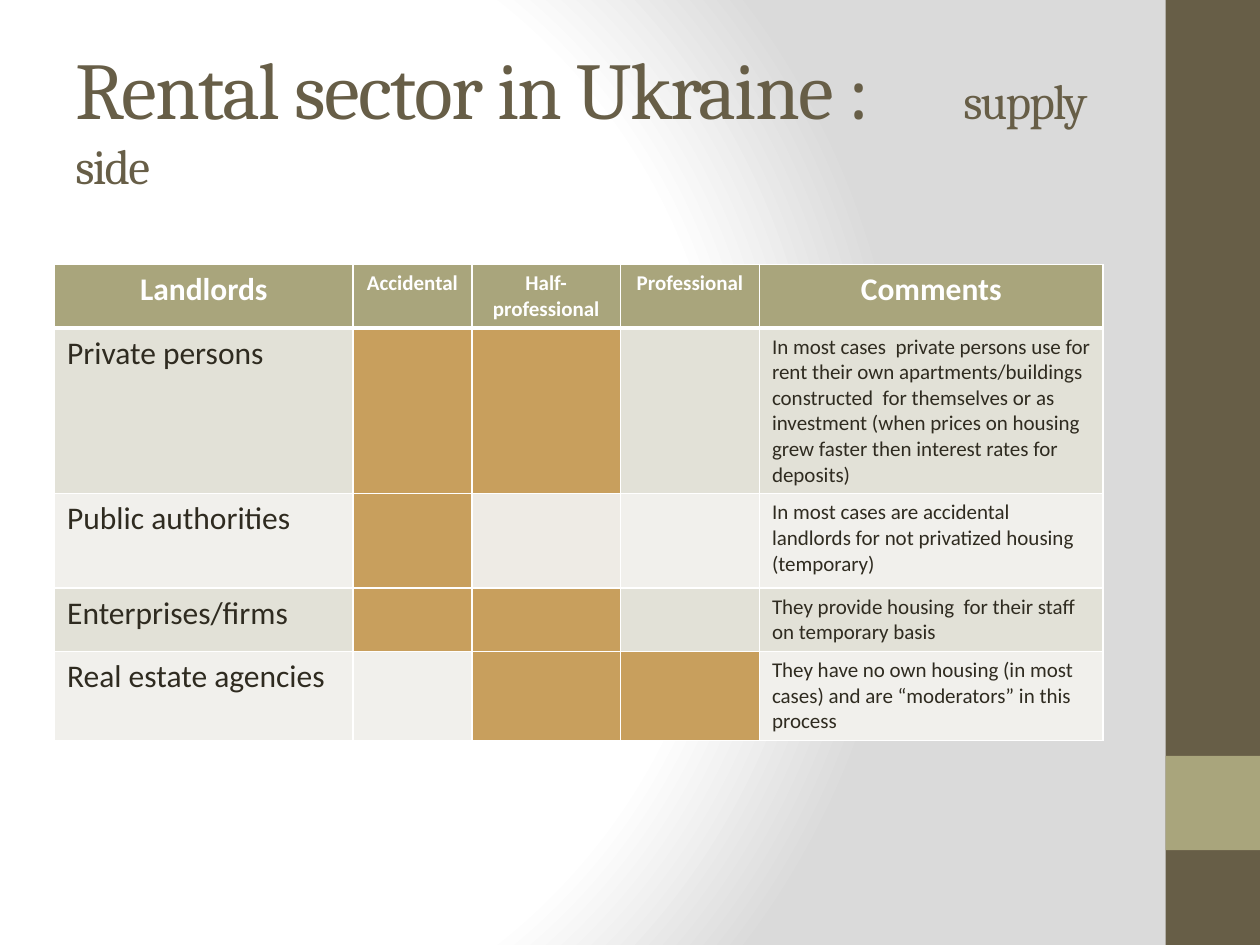
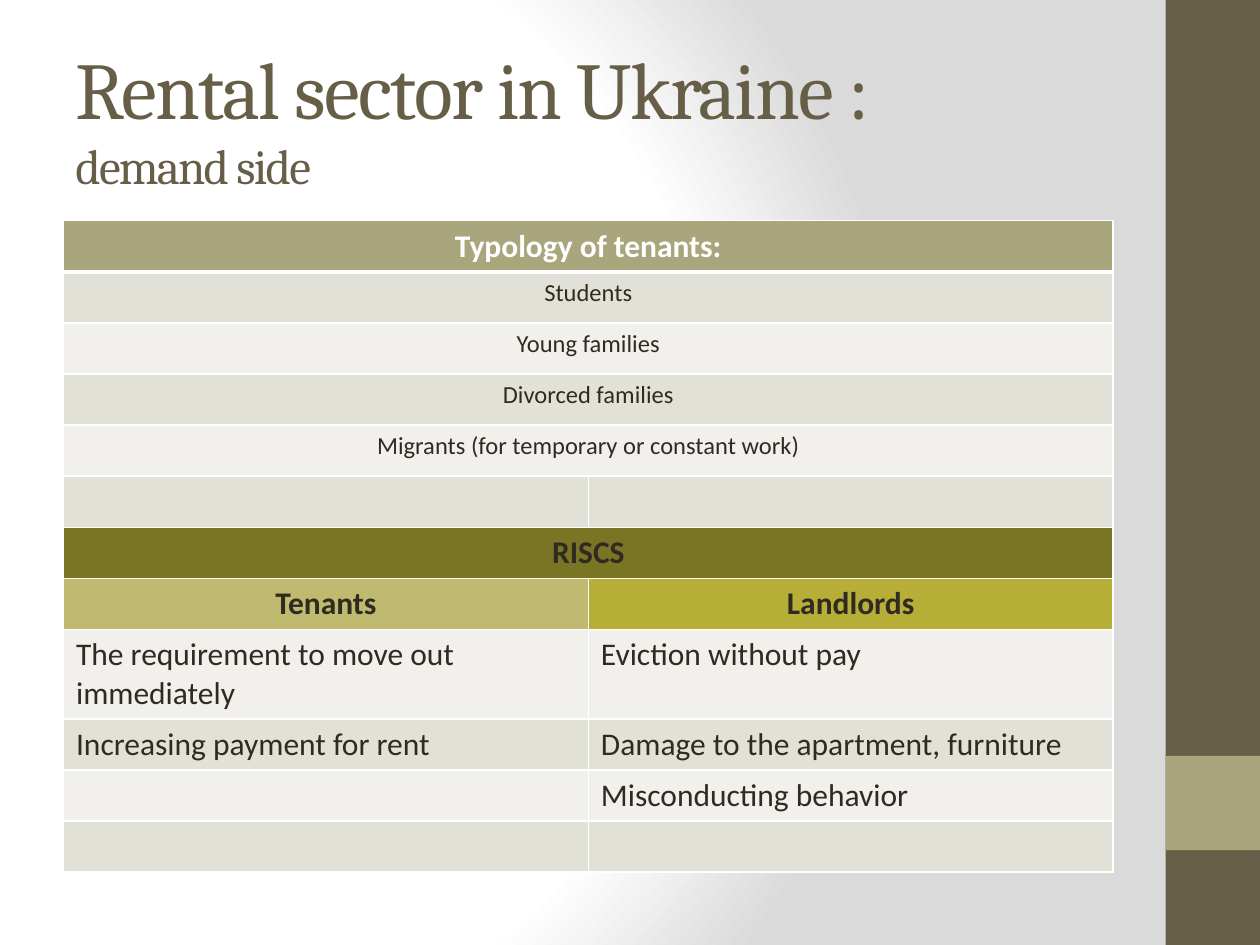
import pptx
import pptx.dml.color
import pptx.enum.shapes
import pptx.enum.text
import pptx.oxml
import pptx.oxml.ns
import pptx.util

Cm = pptx.util.Cm
Pt = pptx.util.Pt
ALIGN = pptx.enum.text.PP_ALIGN

COLORS = {
    "white": "FFFFFF",
    "shade": "DADADA",
    "brown": "675E47",
    "sage": "A9A57C",
    "ink": "2F2B20",
    "odd row": "E2E1D7",
    "even row": "F1F0EC",
    "ochre": "C89F5D",
    "pale": "EEEBE5",
    "olive": "7A7425",
    "khaki": "C0BA71",
    "lime": "B7AE38",
}

STYLES = {
    "header": (18, True, "white", ALIGN.CENTER, "sage"),
    "small header": (12, True, "white", ALIGN.CENTER, "sage"),
    "label": (18, False, "ink", ALIGN.LEFT, None),
    "comment": (12, False, "ink", ALIGN.LEFT, None),
    "tenant": (14, False, "ink", ALIGN.CENTER, None),
    "risks": (18, True, "ink", ALIGN.CENTER, "olive"),
    "tenant risks": (18, True, "ink", ALIGN.CENTER, "khaki"),
    "landlord risks": (18, True, "ink", ALIGN.CENTER, "lime"),
    "marked": (18, False, "ink", ALIGN.LEFT, "ochre"),
    "faint": (18, False, "ink", ALIGN.LEFT, "pale"),
}

EMPTY = ("", "label")
MARKED = ("", "marked")
FAINT = ("", "faint")

BANDS = [
    (0, 19.05, "brown"),
    (15.24, 1.9, "sage"),
]

HEADING = "Rental sector in Ukraine :"

SLIDES = [
    {
        "side": "supply side",
        "same line": True,
        "corner": (1.1, 5.33),
        "columns": [6.02, 2.39, 3, 2.8, 6.93],
        "heights": [1.28, 3.34, 1.9, 1.28, 1.8],
        "rows": [
            [("Landlords", "header"), ("Accidental", "small header"),
             ("Half-professional", "small header"), ("Professional", "small header"),
             ("Comments", "header")],
            [("Private persons", "label"), MARKED, MARKED, EMPTY,
             ("In most cases  private persons use for rent their own apartments/buildings "
              "constructed  for themselves or as investment (when prices on housing grew "
              "faster then interest rates for deposits)", "comment")],
            [("Public authorities", "label"), MARKED, FAINT, EMPTY,
             ("In most cases are accidental landlords for not privatized housing (temporary)",
              "comment")],
            [("Enterprises/firms", "label"), MARKED, MARKED, EMPTY,
             ("They provide housing  for their staff on temporary basis", "comment")],
            [("Real estate agencies", "label"), EMPTY, MARKED, MARKED,
             ("They have no own housing (in most cases) and are “moderators” in this process",
              "comment")],
        ],
    },
    {
        "side": "demand side",
        "same line": False,
        "corner": (1.28, 4.45),
        "columns": [10.58] * 2,
        "heights": [1.03] * 8 + [1.8] + [1.03] * 3,
        "rows": [
            [("Typology of tenants:", "header")],
            [("Students", "tenant")],
            [("Young families", "tenant")],
            [("Divorced families", "tenant")],
            [("Migrants (for temporary or constant work)", "tenant")],
            [EMPTY, EMPTY],
            [("RISCS", "risks")],
            [("Tenants", "tenant risks"), ("Landlords", "landlord risks")],
            [("The requirement to move out immediately", "label"),
             ("Eviction without pay", "label")],
            [("Increasing payment for rent", "label"),
             ("Damage to the apartment, furniture", "label")],
            [EMPTY, ("Misconducting behavior", "label")],
            [EMPTY, EMPTY],
        ],
    },
]


def rgb(name):
    return pptx.dml.color.RGBColor.from_string(COLORS[name])


def drawing(tag, attributes, content):
    namespace = pptx.oxml.ns.nsdecls("a")
    return pptx.oxml.parse_xml(f"<a:{tag} {namespace} {attributes}>{content}</a:{tag}>")


def format_font(font, name, size, color, bold=False):
    font.name = name
    font.size = Pt(size)
    font.bold = bold
    font.color.rgb = rgb(color)


def set_background(master):
    master.background.fill.solid()
    solid = master._element.find(".//" + pptx.oxml.ns.qn("p:bgPr"))[0]
    stops = "".join(
        f'<a:gs pos="{position}000"><a:srgbClr val="{COLORS[color]}"/></a:gs>'
        for position, color in [(0, "white"), (75, "white"), (100, "shade")]
    )
    gradient = drawing(
        "gradFill", 'rotWithShape="1"',
        f'<a:gsLst>{stops}</a:gsLst><a:path path="circle">'
        '<a:fillToRect l="20000" t="50000" r="100000" b="50000"/></a:path>',
    )
    solid.getparent().replace(solid, gradient)


def add_bands(slide):
    for top, height, color in BANDS:
        band = slide.shapes.add_shape(
            pptx.enum.shapes.MSO_SHAPE.RECTANGLE, Cm(23.5), Cm(top), Cm(1.9), Cm(height)
        )
        band.shadow.inherit = False
        band.fill.solid()
        band.fill.fore_color.rgb = rgb(color)
        band.line.fill.background()


def add_title(slide, side, same_line):
    box = slide.shapes.add_textbox(Cm(1.27), Cm(0.76), Cm(21.16), Cm(3.18))
    text_frame = box.text_frame
    text_frame.word_wrap = True
    text_frame.vertical_anchor = pptx.enum.text.MSO_ANCHOR.MIDDLE
    paragraph = text_frame.paragraphs[0]
    paragraph.text = HEADING
    if same_line:
        tab = f'<a:tab pos="{Cm(17.9)}" algn="l"/>'
        paragraph._p.get_or_add_pPr().append(drawing("tabLst", "", tab))
    else:
        paragraph.add_line_break()
    paragraph.add_run().text = "\t" + side if same_line else side
    for run, size in zip(paragraph.runs, (46, 28)):
        format_font(run.font, "Cambria", size, "brown")
        run._r.get_or_add_rPr().set("spc", "-100")


def set_borders(cell, row_index):
    widths = {"lnL": 1, "lnR": 1, "lnT": 1, "lnB": 1}
    if row_index == 0:
        widths["lnB"] = 3
    else:
        del widths["lnT"]
    properties = cell._tc.get_or_add_tcPr()
    line_fill = f'<a:solidFill><a:srgbClr val="{COLORS["white"]}"/></a:solidFill>'
    for position, (tag, width) in enumerate(widths.items()):
        properties.insert(position, drawing(tag, f'w="{Pt(width)}"', line_fill))


def fill_cell(cell, text, style, row_index):
    size, bold, color, alignment, fill = STYLES[style]
    cell.fill.solid()
    cell.fill.fore_color.rgb = rgb(fill or ("odd row" if row_index % 2 else "even row"))
    set_borders(cell, row_index)
    if text:
        cell.text_frame.text = text
        paragraph = cell.text_frame.paragraphs[0]
        paragraph.alignment = alignment
        format_font(paragraph.runs[0].font, "Calibri", size, color, bold)


def add_grid(slide, corner, columns, heights, rows):
    left, top = corner
    table = slide.shapes.add_table(
        len(rows), len(columns), Cm(left), Cm(top), Cm(sum(columns)), Cm(sum(heights))
    ).table
    table.first_row = False
    table.horz_banding = False
    for column, width in zip(table.columns, columns):
        column.width = Cm(width)
    for row_index, (cells, height) in enumerate(zip(rows, heights)):
        table.rows[row_index].height = Cm(height)
        if len(cells) == 1:
            table.cell(row_index, 0).merge(table.cell(row_index, len(columns) - 1))
        for column_index in range(len(columns)):
            text, style = cells[column_index] if column_index < len(cells) else ("", cells[0][1])
            fill_cell(table.cell(row_index, column_index), text, style, row_index)


def main():
    presentation = pptx.Presentation()
    presentation.slide_width = Cm(25.4)
    presentation.slide_height = Cm(19.05)
    set_background(presentation.slide_master)
    for content in SLIDES:
        slide = presentation.slides.add_slide(presentation.slide_layouts[6])
        add_bands(slide)
        add_title(slide, content["side"], content["same line"])
        add_grid(slide, content["corner"], content["columns"], content["heights"], content["rows"])
    presentation.save("out.pptx")


if __name__ == "__main__":
    main()
